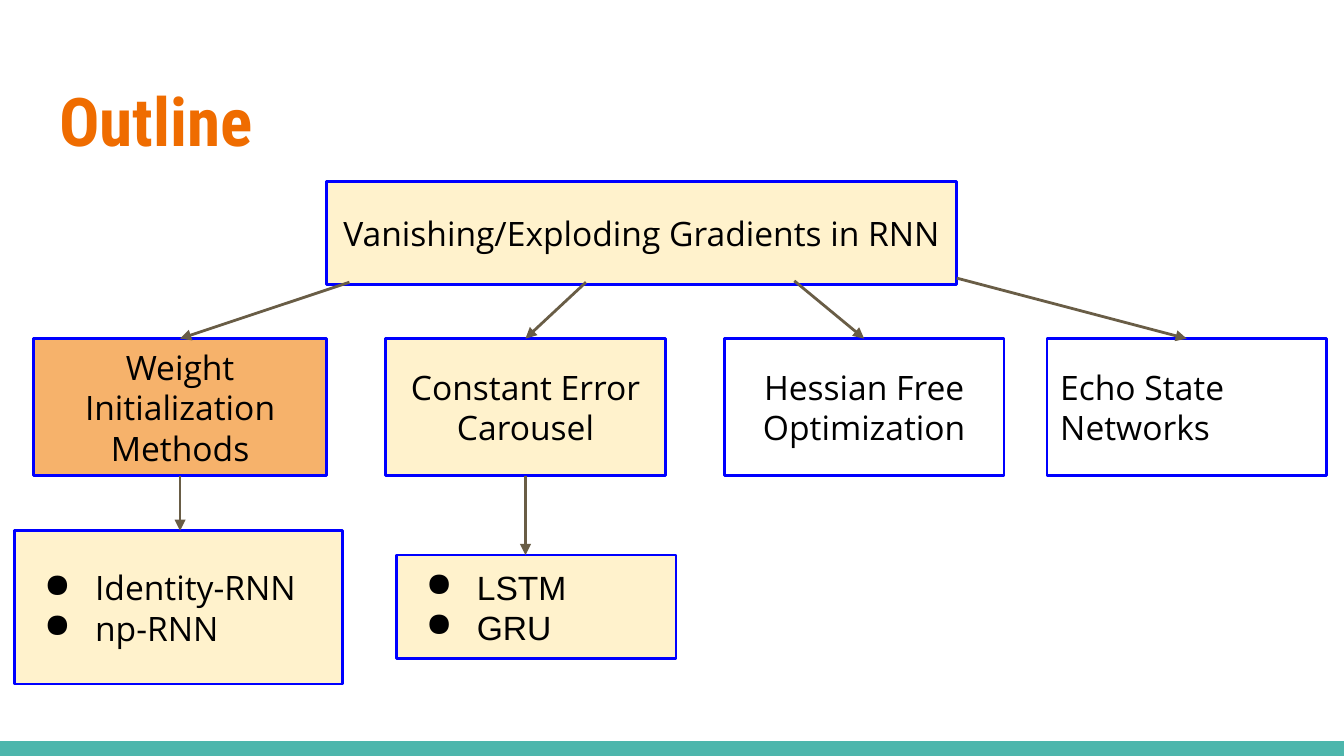
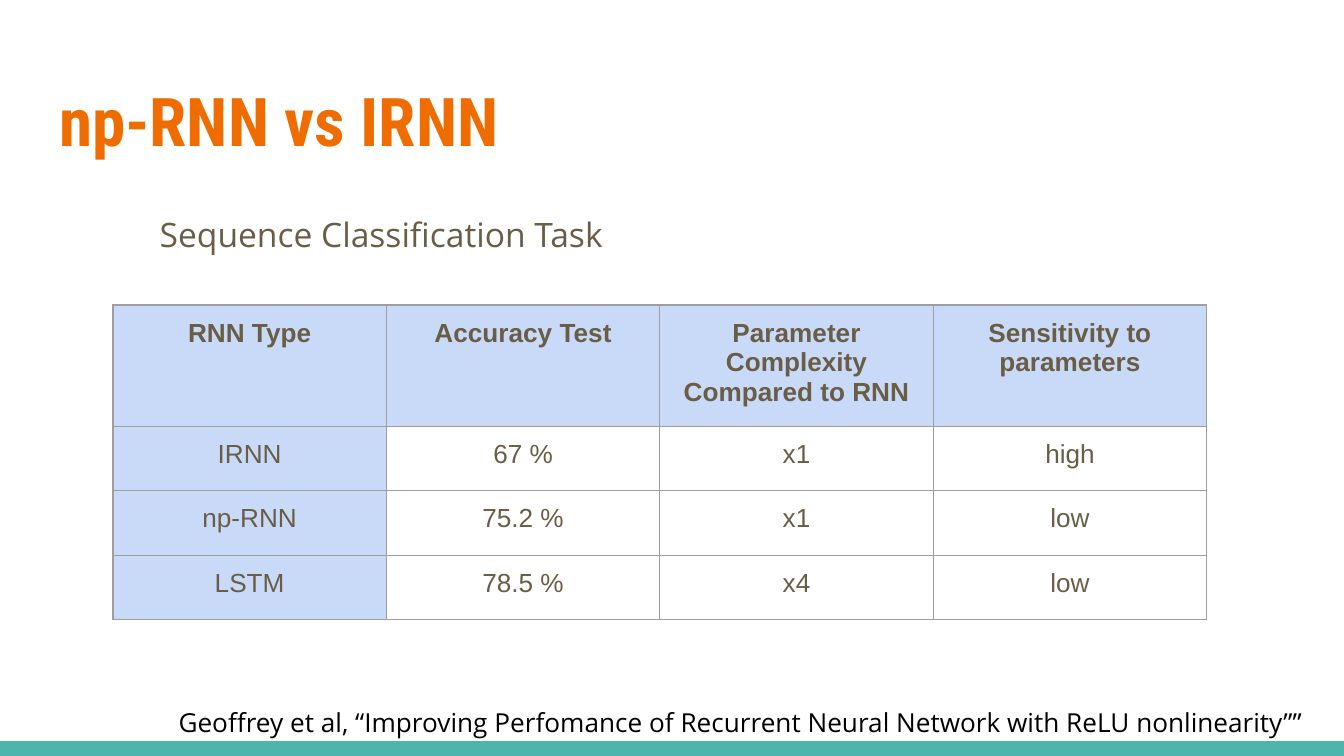
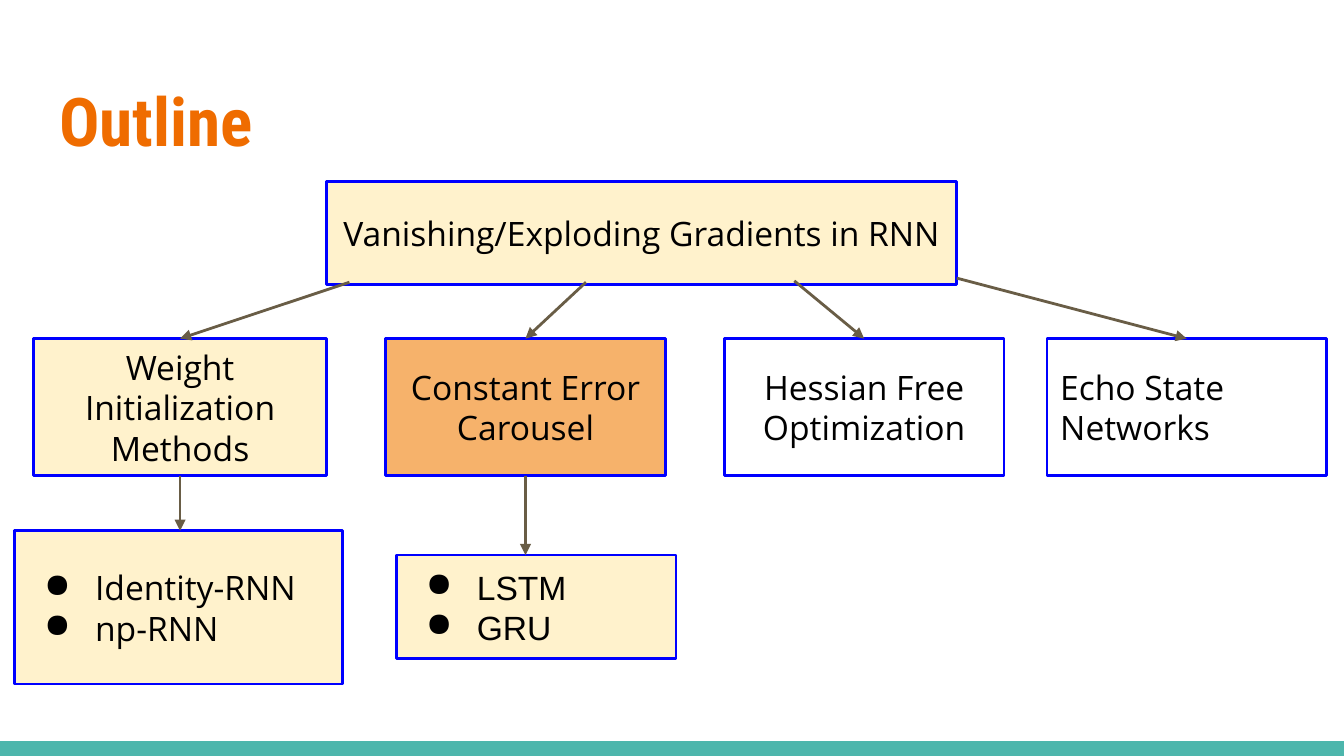
from lxml import etree
from pptx import Presentation
from pptx.dml.color import RGBColor
from pptx.enum.shapes import MSO_CONNECTOR, MSO_SHAPE
from pptx.enum.text import MSO_ANCHOR, MSO_AUTO_SIZE, PP_ALIGN
from pptx.oxml.ns import qn
from pptx.util import Inches, Pt

COLS, ROWS = 100, 56.25
CELL = Inches(10) // COLS
ORANGE, TEAL, BROWN, BLACK = "EF6C00", "4DB6AC", "695D46", "000000"
CREAM, AMBER, WHITE, BLUE = "FFF2CC", "F6B26B", "FFFFFF", "0000FF"
PALE_BLUE, GREY = "C9DAF8", "9E9E9E"
SANS, ARIAL, HEADING = "Open Sans", "Arial", "Roboto Condensed"

ROOT = ("Vanishing/Exploding Gradients in RNN", (24.3, 13.5, 46.9, 7.7))
BRANCH_TOP, BRANCH_HEIGHT = 25.2, 10.2
BRANCHES = [
    ("Weight Initialization Methods", 2.5, 21.8, CREAM, PP_ALIGN.CENTER, (26, 21)),
    ("Constant Error Carousel", 28.7, 20.8, CREAM, PP_ALIGN.CENTER, (43.6, 21)),
    ("Hessian Free Optimization", 53.9, 20.8, WHITE, PP_ALIGN.CENTER, (59.1, 20.9)),
    ("Echo State Networks", 77.9, 20.8, WHITE, PP_ALIGN.LEFT, (71.2, 20.7)),
]
METHODS = [
    ("Identity-RNN\nnp-RNN", (1.1, 39.5, 24.4, 11.4), SANS),
    ("LSTM\nGRU", (29.5, 41.3, 20.8, 7.7), ARIAL),
]
RESULTS = [
    ("RNN Type", "Accuracy Test", "Parameter Complexity\nCompared to RNN",
     "Sensitivity to parameters"),
    ("IRNN", "67 %", "x1", "high"),
    ("np-RNN", "75.2 %", "x1", "low"),
    ("LSTM", "78.5 %", "x4", "low"),
]


def rgb(value):
    """Turn a hex string into a colour."""
    return RGBColor.from_string(value)


def grid(*cells):
    """Turn grid columns and rows into lengths."""
    return [round(n * CELL) for n in cells]


def write(tf, text, size, font, color, bold=False, align=PP_ALIGN.LEFT, bullet=None):
    """Fill a text frame and format all its runs."""
    tf.text = text
    tf.word_wrap = True
    for p in tf.paragraphs:
        p.alignment = align
        if bullet:
            indent(p, 5, -3.8)
            etree.SubElement(p._p.get_or_add_pPr(), qn("a:buChar"), char=bullet)
        for r in p.runs:
            r.font.size, r.font.name, r.font.bold = Pt(size), font, bold
            r.font.color.rgb = rgb(color)


def indent(p, left, first):
    """Set the left margin and first-line indent of a paragraph."""
    pPr = p._p.get_or_add_pPr()
    for name, length in zip(("marL", "indent"), grid(left, first)):
        pPr.set(name, str(length))


def set_margins(tf):
    """Give a text frame or table cell equal margins."""
    tf.margin_left = tf.margin_right = tf.margin_top = tf.margin_bottom = CELL


def add_rect(slide, box, fill, line=None):
    """Add a flat rectangle with an optional outline."""
    sp = slide.shapes.add_shape(MSO_SHAPE.RECTANGLE, *grid(*box))
    sp.shadow.inherit = False
    sp.fill.solid()
    sp.fill.fore_color.rgb = rgb(fill)
    if line:
        sp.line.color.rgb = rgb(line)
        sp.line.width = Pt(1.5)
    else:
        sp.line.fill.background()
    return sp


def add_node(slide, text, box, fill, font=SANS, align=PP_ALIGN.CENTER, bullet=None):
    """Add an outlined box of the tree."""
    tf = add_rect(slide, box, fill, BLUE).text_frame
    set_margins(tf)
    tf.vertical_anchor = MSO_ANCHOR.MIDDLE
    write(tf, text, 18, font, BLACK, align=align, bullet=bullet)


def add_arrow(slide, start, end):
    """Add a straight arrow between two grid points."""
    cxn = slide.shapes.add_connector(MSO_CONNECTOR.STRAIGHT, *grid(*start, *end))
    cxn.line.color.rgb = rgb(BROWN)
    cxn.line.width = Pt(1.5)
    etree.SubElement(cxn.line._get_or_add_ln(), qn("a:tailEnd"), type="triangle")
    etree.SubElement(cxn._element.spPr, qn("a:effectLst"))


def add_text(slide, text, box, size, color, anchor=MSO_ANCHOR.TOP):
    """Add a text box and return its text frame."""
    tf = slide.shapes.add_textbox(*grid(*box)).text_frame
    set_margins(tf)
    tf.vertical_anchor = anchor
    write(tf, text, size, SANS, color)
    return tf


def add_borders(cell):
    """Draw thin grey lines on the four sides of a cell."""
    tcPr = cell._tc.get_or_add_tcPr()
    for side in ("lnL", "lnR", "lnT", "lnB"):
        ln = etree.SubElement(tcPr, qn(f"a:{side}"), w=str(Pt(0.75)))
        fill = etree.SubElement(ln, qn("a:solidFill"))
        etree.SubElement(fill, qn("a:srgbClr"), val=GREY)


def add_table(slide, rows, left, top, col_width, heights):
    """Add a table with a shaded header row and first column."""
    box = grid(left, top, col_width * len(rows[0]), sum(heights))
    table = slide.shapes.add_table(len(rows), len(rows[0]), *box).table
    table.first_row = table.horz_banding = False
    for col in table.columns:
        col.width = grid(col_width)[0]
    for i, row in enumerate(rows):
        table.rows[i].height = grid(heights[i])[0]
        for j, text in enumerate(row):
            cell = table.cell(i, j)
            set_margins(cell)
            write(cell.text_frame, text, 14, ARIAL, BROWN, i == 0, PP_ALIGN.CENTER)
            add_borders(cell)
            if i == 0 or j == 0:
                cell.fill.solid()
                cell.fill.fore_color.rgb = rgb(PALE_BLUE)
            else:
                cell.fill.background()


def add_slide(prs, title):
    """Add a slide with the bottom band and a formatted title."""
    slide = prs.slides.add_slide(prs.slide_layouts[5])
    add_rect(slide, (0, ROWS - 1.1, COLS, 1.1), TEAL)
    sp = slide.shapes.title
    sp.left, sp.top, sp.width, sp.height = grid(3.4, 4.9, 93.2, 7.7)
    tf = sp.text_frame
    set_margins(tf)
    tf.vertical_anchor = MSO_ANCHOR.TOP
    tf.auto_size = MSO_AUTO_SIZE.NONE
    write(tf, title, 36, HEADING, ORANGE, bold=True)
    return slide


def outline_slide(prs, current):
    """Add the outline tree with the current branch highlighted."""
    slide = add_slide(prs, "Outline")
    add_node(slide, *ROOT, CREAM)
    centers = []
    for i, (text, left, width, fill, align, _) in enumerate(BRANCHES):
        box = (left, BRANCH_TOP, width, BRANCH_HEIGHT)
        add_node(slide, text, box, AMBER if i == current else fill, align=align)
        centers.append(left + width / 2)
    for text, box, font in METHODS:
        add_node(slide, text, box, CREAM, font, PP_ALIGN.LEFT, "●")
    for branch, x in zip(BRANCHES, centers):
        add_arrow(slide, branch[-1], (x, BRANCH_TOP))
    for (_, box, _), x in zip(METHODS, centers):
        add_arrow(slide, (x, BRANCH_TOP + BRANCH_HEIGHT), (x, box[1]))


def results_slide(prs):
    """Add the comparison table with its caption and citation."""
    slide = add_slide(prs, "np-RNN vs IRNN")
    add_text(slide, "Geoffrey et al, “Improving Perfomance of Recurrent Neural "
             "Network with ReLU nonlinearity””",
             (12.3, 51.4, 86.5, 4.6), 14, BLACK, MSO_ANCHOR.MIDDLE)
    add_table(slide, RESULTS, 8.4, 22.7, 20.35, (8.6, 4.8, 4.8, 4.8))
    tf = add_text(slide, "Sequence Classification Task", (8.4, 14.5, 91.6, 8), 18, BROWN)
    p = tf.paragraphs[0]
    p.line_spacing = 1.15
    indent(p, 5, -2.5)


def main():
    """Build and save the three slides."""
    prs = Presentation()
    prs.slide_width, prs.slide_height = grid(COLS, ROWS)
    outline_slide(prs, 0)
    results_slide(prs)
    outline_slide(prs, 1)
    prs.save("out.pptx")


if __name__ == "__main__":
    main()
